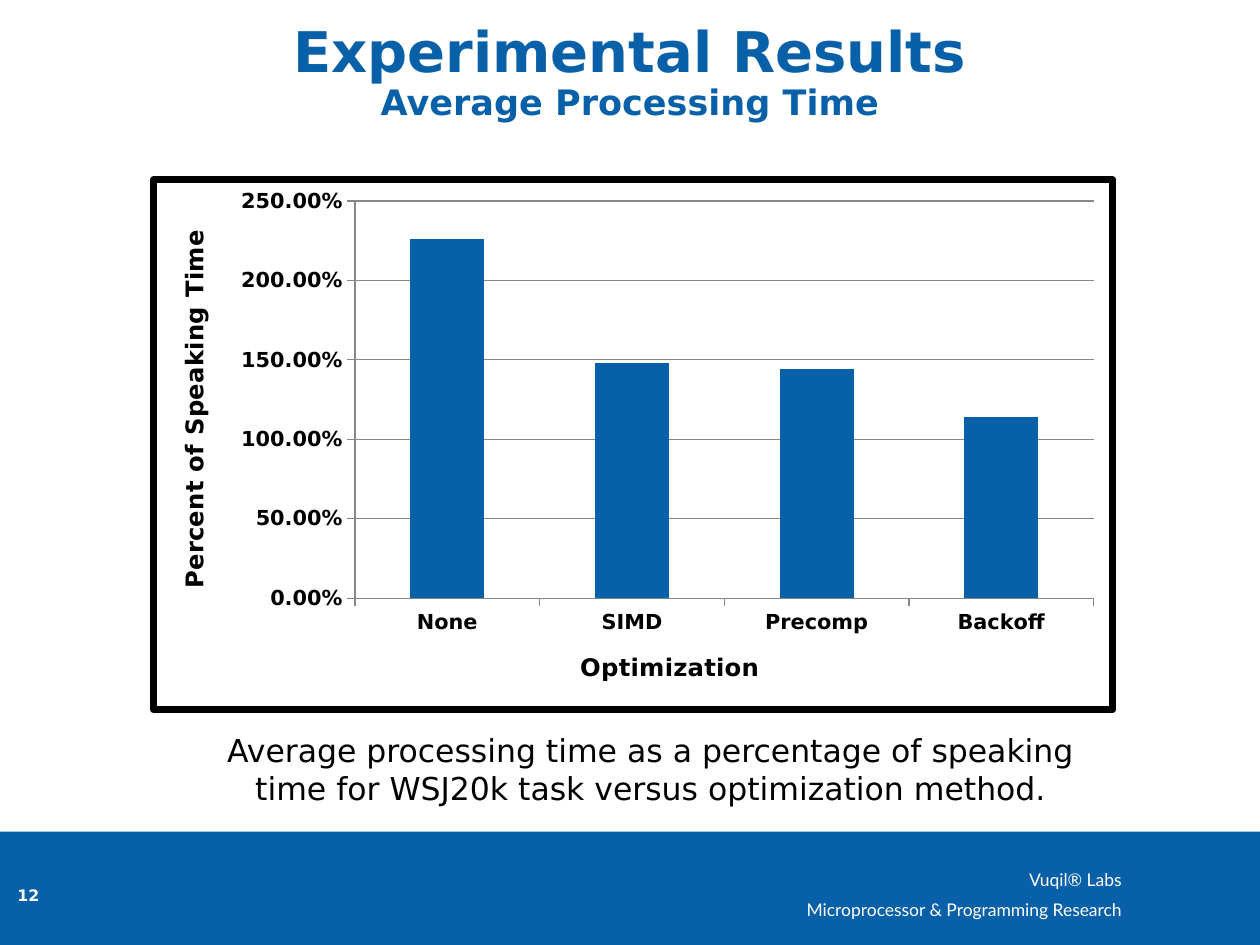
from dataclasses import dataclass

import lxml.etree
import pptx
import pptx.chart.data
import pptx.dml.color
import pptx.enum.chart
import pptx.enum.shapes
import pptx.enum.text
import pptx.oxml
import pptx.oxml.ns
import pptx.util

Inches = pptx.util.Inches
Pt = pptx.util.Pt
Align = pptx.enum.text.PP_ALIGN
Anchor = pptx.enum.text.MSO_ANCHOR
qn = pptx.oxml.ns.qn

BLUE, WHITE, BLACK, GRAY = "0860A8", "FFFFFF", "000000", "878787"
SANS, LATO = "DejaVu Sans", "Lato"


@dataclass
class Line:
    text: str
    size: float


@dataclass
class TextBlock:
    box: tuple[float, float, float, float]
    lines: list[Line]
    color: str
    font: str = SANS
    bold: bool = False
    align: Align = Align.CENTER
    anchor: Anchor = Anchor.TOP
    margins: tuple[float, float] = (0.1, 0.05)
    line_spacing: float = 1.0
    gap: float = 0
    one_paragraph: bool = False


def rgb(value: str) -> pptx.dml.color.RGBColor:
    return pptx.dml.color.RGBColor.from_string(value)


def style_font(font, size: float, color: str, bold: bool, name: str = SANS) -> None:
    for key, value in {"size": Pt(size), "bold": bold, "name": name}.items():
        setattr(font, key, value)
    font.color.rgb = rgb(color)


def add_text(slide, block: TextBlock) -> None:
    frame = slide.shapes.add_textbox(*map(Inches, block.box)).text_frame
    side, top = map(Inches, block.margins)
    frame_format = {
        "word_wrap": True,
        "vertical_anchor": block.anchor,
        "margin_left": side,
        "margin_right": side,
        "margin_top": top,
        "margin_bottom": top,
    }
    for key, value in frame_format.items():
        setattr(frame, key, value)
    paragraph = frame.paragraphs[0]
    for index, line in enumerate(block.lines):
        if index and block.one_paragraph:
            paragraph.add_line_break()
        elif index:
            paragraph = frame.add_paragraph()
            paragraph.space_before = Pt(block.gap)
        paragraph.alignment = block.align
        paragraph.line_spacing = block.line_spacing
        run = paragraph.add_run()
        run.text = line.text
        style_font(run.font, line.size, block.color, block.bold, block.font)


def place(element, position: int, values: dict[str, object]) -> None:
    """Give a chart element a manual layout, as its child at this position."""
    for old in element.findall(qn("c:layout")):
        element.remove(old)
    layout = lxml.etree.Element(qn("c:layout"))
    manual = lxml.etree.SubElement(layout, qn("c:manualLayout"))
    for key, value in values.items():
        lxml.etree.SubElement(manual, qn(f"c:{key}")).set("val", str(value))
    element.insert(position, layout)


def style_axis(axis, title: str, x: float, y: float, rotation: int) -> None:
    axis.major_tick_mark = pptx.enum.chart.XL_TICK_MARK.OUTSIDE
    axis.minor_tick_mark = pptx.enum.chart.XL_TICK_MARK.NONE
    axis.format.line.color.rgb = rgb(GRAY)
    style_font(axis.tick_labels.font, 12, BLACK, True)
    frame = axis.axis_title.text_frame
    frame.text = title
    style_font(frame.paragraphs[0].runs[0].font, 14, BLACK, True)
    element = axis.axis_title._element
    element.find(f".//{qn('a:bodyPr')}").set("rot", str(rotation * 60000))
    place(element, 1, {"xMode": "edge", "yMode": "edge", "x": x, "y": y})


def add_border(chart, color: str, width: float) -> None:
    """Outline the whole chart area with rounded corners."""
    namespaces = pptx.oxml.ns.nsdecls("c", "a")
    border = pptx.oxml.parse_xml(
        f'<c:spPr {namespaces}><a:noFill/><a:ln w="{Pt(width)}">'
        f'<a:solidFill><a:srgbClr val="{color}"/></a:solidFill>'
        "<a:round/></a:ln></c:spPr>"
    )
    chart._chartSpace.find(qn("c:chart")).addnext(border)


def add_processing_chart(slide) -> None:
    times = pptx.chart.data.CategoryChartData(number_format="0.00%")
    times.categories = ["None", "SIMD", "Precomp", "Backoff"]
    times.add_series("Series 1", [2.26, 1.48, 1.44, 1.14])
    chart = slide.shapes.add_chart(
        pptx.enum.chart.XL_CHART_TYPE.COLUMN_CLUSTERED,
        *map(Inches, (1.19, 1.4, 7.67, 4.26)),
        times,
    ).chart
    chart.has_legend = False
    chart.has_title = False
    style_font(chart.font, 10, BLACK, False)
    add_border(chart, BLACK, 4)

    plot = chart.plots[0]
    plot.gap_width = 150
    plot.vary_by_categories = False
    bars = plot.series[0].format.fill
    bars.solid()
    bars.fore_color.rgb = rgb(BLUE)

    style_axis(chart.category_axis, "Optimization", 0.44, 0.88, 0)
    percent = chart.value_axis
    style_axis(percent, "Percent of Speaking Time", 0.02, 0.09, -90)
    scale = {"minimum_scale": 0, "maximum_scale": 2.5, "major_unit": 0.5}
    for key, value in scale.items():
        setattr(percent, key, value)
    percent.tick_labels.number_format = "0.00%"
    percent.tick_labels.number_format_is_linked = False
    percent.major_gridlines.format.line.color.rgb = rgb(GRAY)

    place(
        chart._chartSpace.find(f".//{qn('c:plotArea')}"),
        0,
        {"layoutTarget": "inner", "xMode": "edge", "yMode": "edge",
         "x": 0.21, "y": 0.04, "w": 0.77, "h": 0.75},
    )


def add_footer_band(slide) -> None:
    band = slide.shapes.add_shape(
        pptx.enum.shapes.MSO_SHAPE.RECTANGLE, *map(Inches, (0, 6.6, 10, 0.9))
    )
    band.shadow.inherit = False
    band.fill.solid()
    band.fill.fore_color.rgb = rgb(BLUE)
    band.line.fill.background()


def main() -> None:
    deck = pptx.Presentation()
    deck.slide_width, deck.slide_height = Inches(10), Inches(7.5)
    slide = deck.slides.add_slide(deck.slide_layouts[6])

    page_number = TextBlock((0, 6.94, 0.45, 0.33), [Line("12", 9)], WHITE, bold=True,
                            anchor=Anchor.MIDDLE, margins=(0, 0))
    department = TextBlock(
        (5.9, 6.85, 3.1, 0.52),
        [Line("Vuqil® Labs", 10), Line("Microprocessor & Programming Research", 10)],
        WHITE, font=LATO, align=Align.RIGHT, gap=5,
    )
    heading = TextBlock(
        (0.4, 0.17, 9.2, 0.83),
        [Line("Experimental Results", 32), Line("Average Processing Time", 20)],
        BLUE, bold=True, anchor=Anchor.MIDDLE, line_spacing=0.9, one_paragraph=True,
    )
    caption = TextBlock(
        (1.43, 5.75, 7.47, 0.71),
        [Line("Average processing time as a percentage of speaking time "
              "for WSJ20k task versus optimization method.", 18)],
        BLACK,
    )

    add_footer_band(slide)
    for block in (page_number, department, heading):
        add_text(slide, block)
    add_processing_chart(slide)
    add_text(slide, caption)
    deck.save("out.pptx")


if __name__ == "__main__":
    main()
